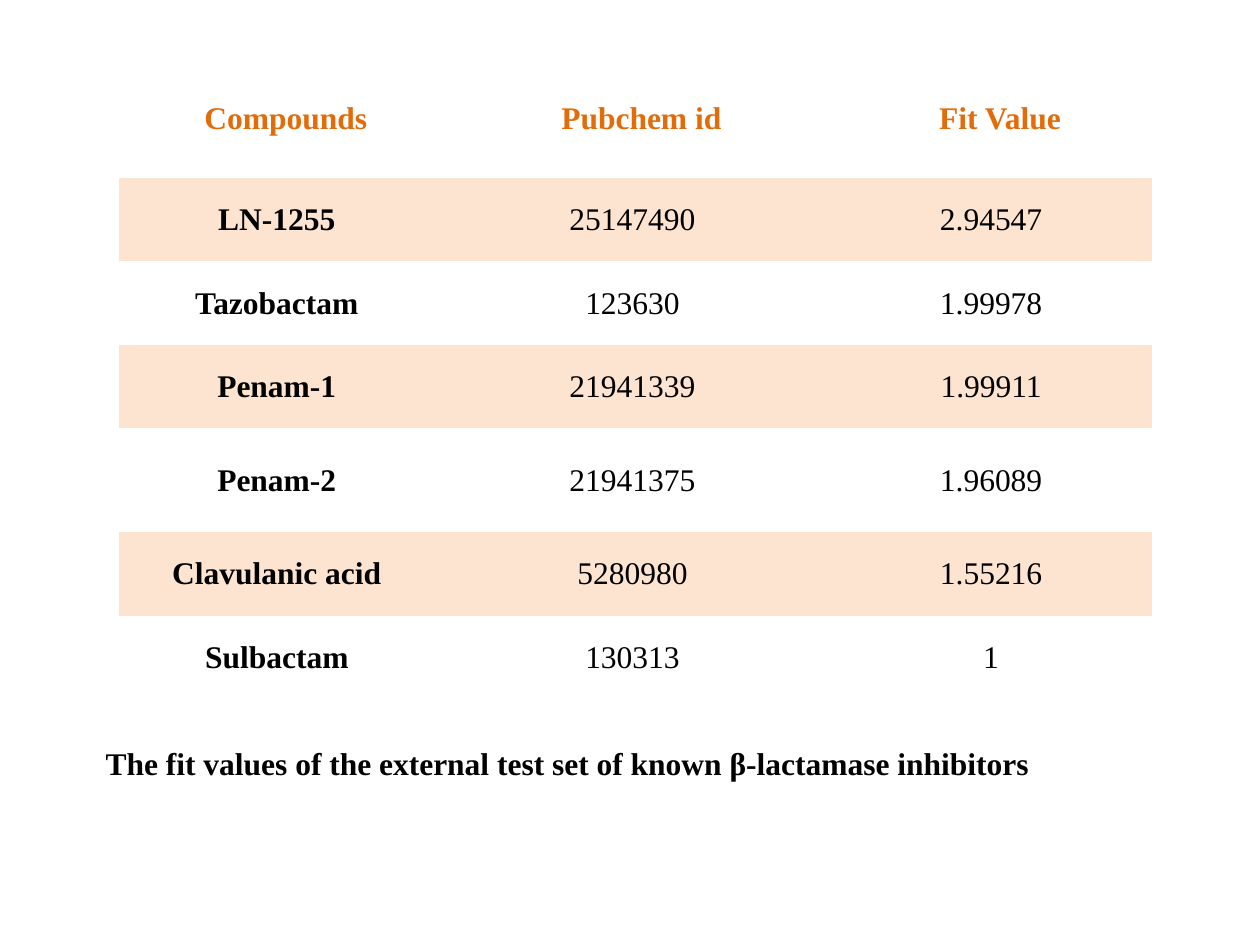
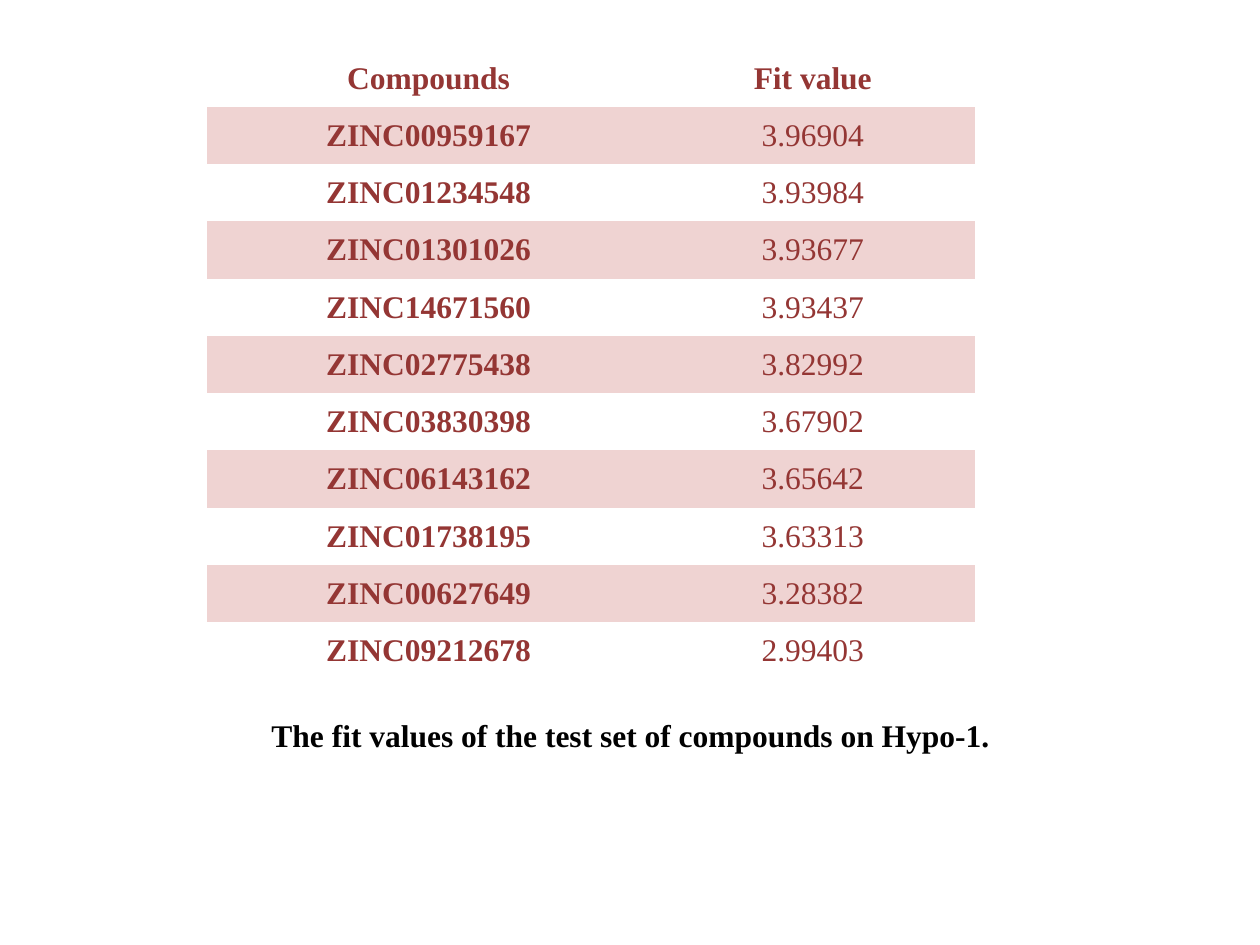
from dataclasses import dataclass

from pptx import Presentation
from pptx import util as u
from pptx.dml.color import RGBColor
from pptx.enum import text as t


@dataclass(frozen=True)
class Theme:
    font: str = "Times New Roman"
    size: int = 18
    ink: str = "000000"
    orange: str = "E36C0A"
    peach: str = "FDE4D0"
    wine: str = "943634"
    rose: str = "EFD3D2"
    plain: str = "{2D5ABB26-0587-4C30-8999-92F81FD0307C}"


THEME = Theme()

KNOWN = [
    ("Compounds", "Pubchem id", "Fit Value"),
    ("LN-1255", "25147490", "2.94547"),
    ("Tazobactam", "123630", "1.99978"),
    ("Penam-1", "21941339", "1.99911"),
    ("Penam-2", "21941375", "1.96089"),
    ("Clavulanic acid", "5280980", "1.55216"),
    ("Sulbactam", "130313", "1"),
]

TESTED = [
    ("Compounds", "Fit value"),
    ("ZINC00959167", "3.96904"),
    ("ZINC01234548", "3.93984"),
    ("ZINC01301026", "3.93677"),
    ("ZINC14671560", "3.93437"),
    ("ZINC02775438", "3.82992"),
    ("ZINC03830398", "3.67902"),
    ("ZINC06143162", "3.65642"),
    ("ZINC01738195", "3.63313"),
    ("ZINC00627649", "3.28382"),
    ("ZINC09212678", "2.99403"),
]


def write(frame, words, color=THEME.ink, bold=True, align=t.PP_ALIGN.CENTER,
          line=None, after=None, indent=0):
    para = frame.paragraphs[0]
    para.alignment = align
    para.line_spacing = line
    if after is not None:
        para.space_after = u.Pt(after)
    if indent:
        props = para._p.get_or_add_pPr()
        props.set("marL", "0")
        props.set("indent", str(u.Cm(indent)))
    run = para.add_run()
    run.text = words
    font = run.font
    font.name, font.size, font.bold = THEME.font, u.Pt(THEME.size), bold
    font.color.rgb = RGBColor.from_string(color)


def caption(slide, words, left, top, width, **form):
    box = slide.shapes.add_textbox(u.Cm(left), u.Cm(top), u.Cm(width), u.Cm(1.02))
    frame = box.text_frame
    frame.word_wrap = True
    frame.vertical_anchor = t.MSO_ANCHOR.MIDDLE
    write(frame, words, **form)


def fill_cell(cell, words, band, **form):
    cell.margin_left = cell.margin_right = u.Cm(0.2)
    cell.margin_top, cell.margin_bottom = u.Cm(0.08), 0
    cell.vertical_anchor = t.MSO_ANCHOR.MIDDLE
    if band:
        cell.fill.solid()
        cell.fill.fore_color.rgb = RGBColor.from_string(band)
    else:
        cell.fill.background()
    write(cell.text_frame, words, line=0.86, **form)


def grid(slide, data, left, top, widths, heights, head, body, band, indent=0, gap=10):
    frame = slide.shapes.add_table(
        len(data), len(widths), u.Cm(left), u.Cm(top),
        u.Cm(sum(widths)), u.Cm(sum(heights)))
    table = frame.table
    table._tbl.tblPr.find("{*}tableStyleId").text = THEME.plain
    table.horz_banding = False
    for col, width in zip(table.columns, widths):
        col.width = u.Cm(width)
    for i, (row, height, values) in enumerate(zip(table.rows, heights, data)):
        row.height = u.Cm(height)
        first = i == 0
        for j, words in enumerate(values):
            fill_cell(row.cells[j], words, band if i % 2 else None,
                      color=head if first else body, bold=first or j == 0,
                      indent=indent if first else 0, after=gap if first else 10)


def main():
    deck = Presentation()
    deck.slide_width, deck.slide_height = u.Cm(25.4), u.Cm(19.05)
    blank = deck.slide_layouts[6]

    slide = deck.slides.add_slide(blank)
    caption(slide, "The fit values of the external test set of known β-lactamase inhibitors",
            1.88, 14.88, 21.64, align=t.PP_ALIGN.LEFT)
    grid(slide, KNOWN, 2.39, 1.19, [6.38, 7.96, 6.5],
         [2.4] + [1.68] * 3 + [2.1] + [1.68] * 2,
         THEME.orange, THEME.ink, THEME.peach, indent=0.36, gap=0)

    slide = deck.slides.add_slide(blank)
    caption(slide, "The fit values of the test set of compounds on Hypo-1.", 2.49, 14.3, 20.45)
    count = len(TESTED)
    grid(slide, TESTED, 4.17, 1, [8.94, 6.55], [12.7 / count] * count,
         THEME.wine, THEME.wine, THEME.rose)

    deck.save("out.pptx")


if __name__ == "__main__":
    main()
